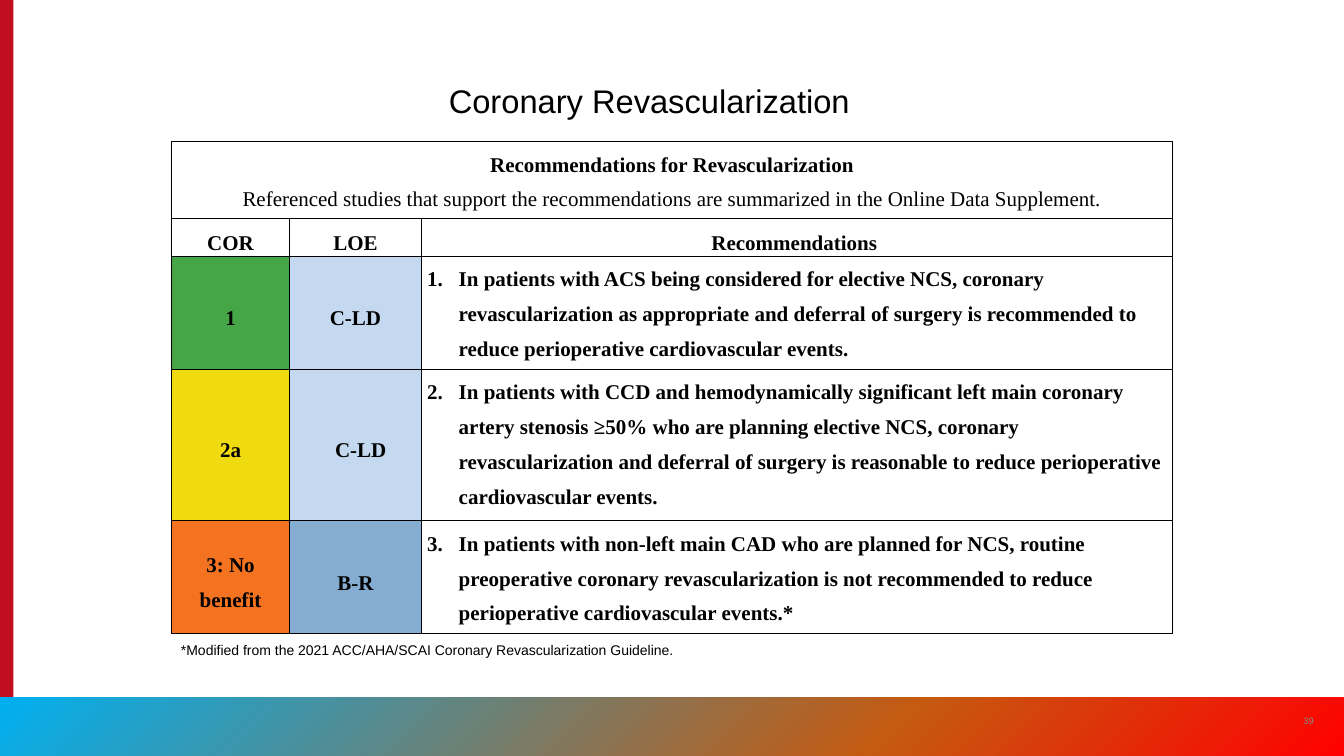
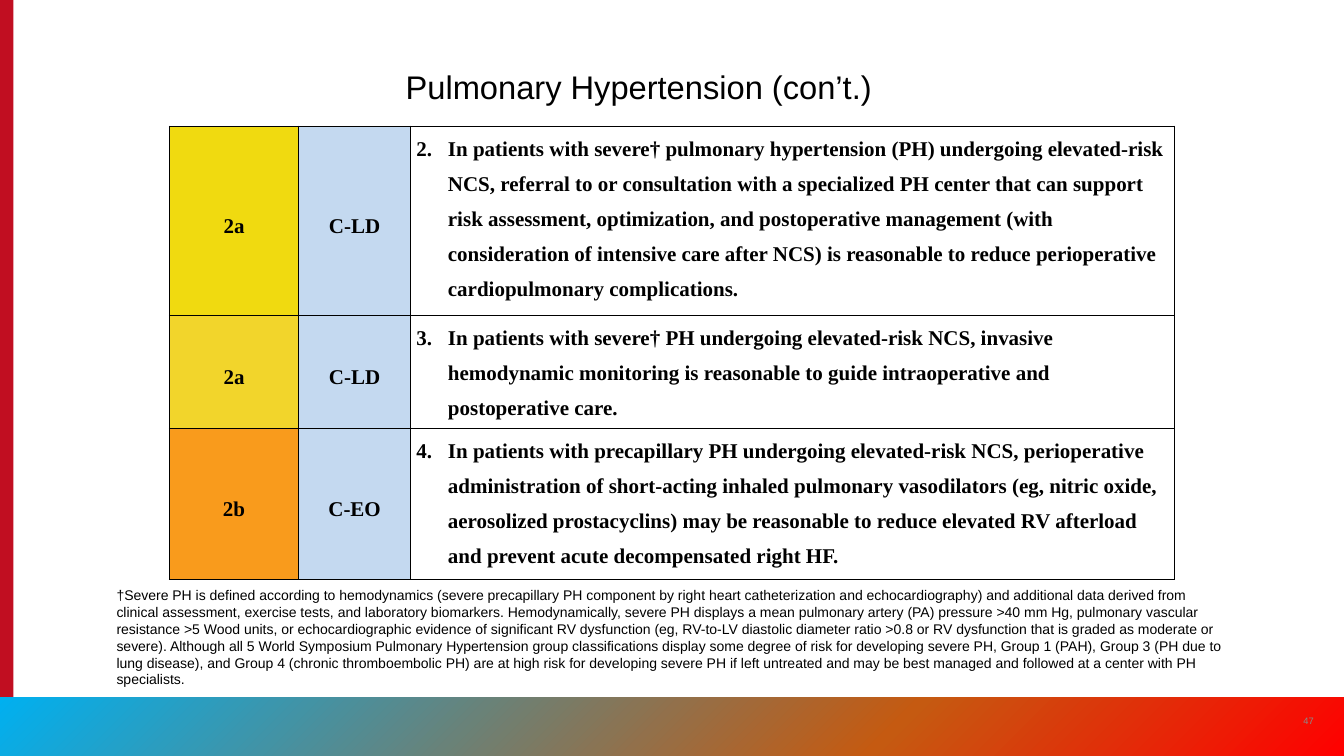
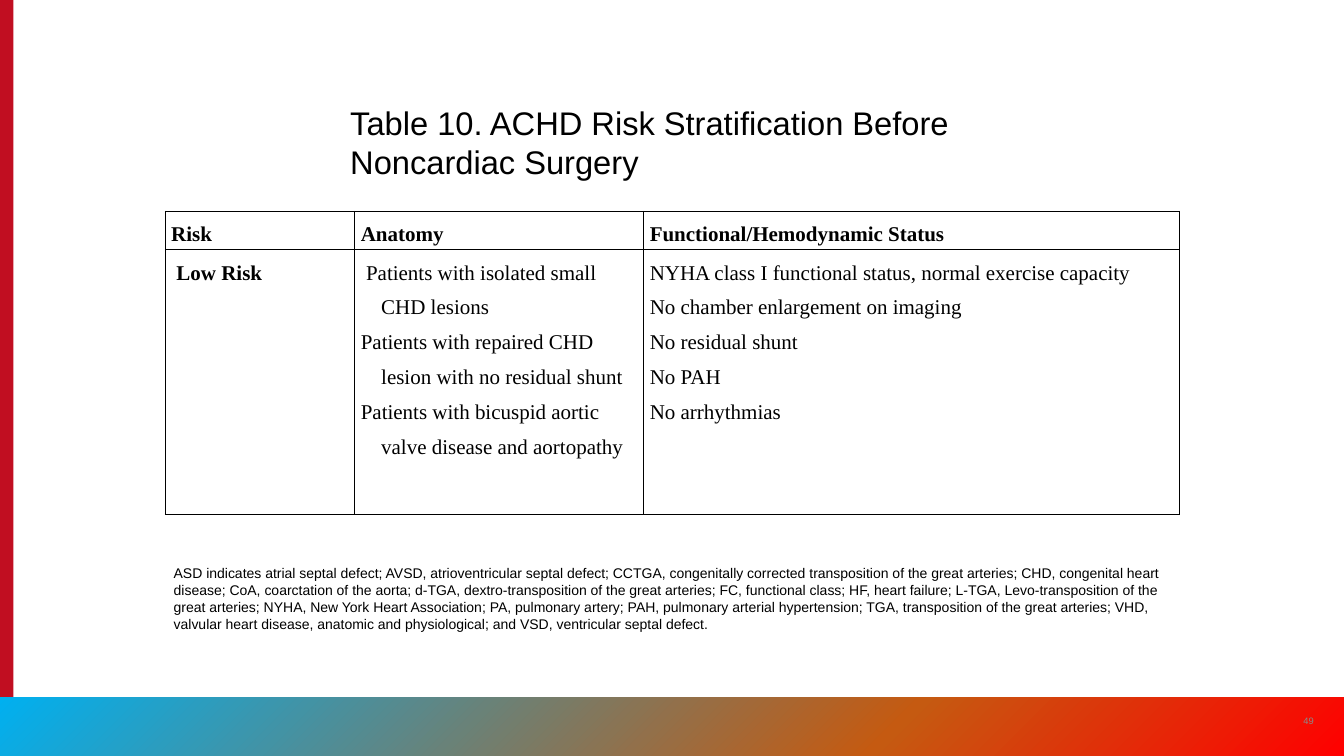
import copy
import dataclasses

import lxml.etree
import pptx
import pptx.dml.color
import pptx.enum.shapes
import pptx.enum.text
import pptx.oxml.ns
import pptx.util

Pt = pptx.util.Pt
qn = pptx.oxml.ns.qn
ALIGN = pptx.enum.text.PP_ALIGN
ANCHOR = pptx.enum.text.MSO_ANCHOR
RECTANGLE = pptx.enum.shapes.MSO_SHAPE.RECTANGLE

COLOURS = {
    "text": "000000",
    "number": "8A8B8A",
    "red stripe": "C10E21",
    "band start": "00B0F0",
    "band middle": "C55A11",
    "band end": "FF0000",
    "green": "45A547",
    "yellow": "F0DA10",
    "gold": "F2D52B",
    "amber": "F99B1C",
    "orange": "F37321",
    "pale blue": "C4D9F0",
    "mid blue": "85ADD1",
}
SANS, SERIF = "Arial", "Times New Roman"
WIDTH, HEIGHT, BAND_TOP = 1152, 648, 597.6


def colour(name):
    return pptx.dml.color.RGBColor.from_string(COLOURS[name])


@dataclasses.dataclass
class Cell:
    """Content of one table cell; lengths are points."""
    lines: list
    fill: str = ""
    bold: bool = True
    align: ALIGN = ALIGN.CENTER
    anchor: ANCHOR = ANCHOR.MIDDLE
    margin_left: float = 0
    margin_right: float = 0
    hanging: float = 0
    first_shift: float = 0  # extra indent of the first paragraph
    number: int = 0         # list number, if any
    span: int = 1


def recommendation(grade, grade_fill, evidence, evidence_fill, number, text, shift=0):
    """Table row: class, level of evidence, numbered text."""
    return [
        Cell(grade.split("\n"), grade_fill),
        Cell([evidence], evidence_fill, margin_left=shift),
        Cell([text], align=ALIGN.LEFT, anchor=ANCHOR.TOP,
             margin_left=27, hanging=27, number=number),
    ]


def left_cell(*lines, bold=False, first_shift=0):
    return Cell(list(lines), bold=bold, align=ALIGN.LEFT, anchor=ANCHOR.TOP,
                margin_left=17.5, hanging=17.5, first_shift=first_shift)


class Deck:
    """Holds the style and the current slide."""

    def __init__(self):
        self.presentation = pptx.Presentation()
        self.presentation.slide_width = Pt(WIDTH)
        self.presentation.slide_height = Pt(HEIGHT)
        self.layout = self.presentation.slide_layouts[5]
        self.slide = None

    def new_slide(self, number):
        first = self.slide is None
        self.slide = self.presentation.slides.add_slide(self.layout)
        if first:
            self.decorate_layout()
        self.text(str(number), 1104.5, 600.5, 34.5, 34.5, 8, "number",
                  ALIGN.CENTER, ANCHOR.MIDDLE)

    def decorate_layout(self):
        """Draw the stripe and the band once, then move them to the layout."""
        stripe = self.rectangle(0, 0, 11.5, HEIGHT)
        stripe.fill.solid()
        stripe.fill.fore_color.rgb = colour("red stripe")
        band = self.rectangle(0, BAND_TOP, WIDTH, HEIGHT - BAND_TOP)
        band.fill.gradient()
        band.fill.gradient_angle = 315
        stop_list = next(band.element.iter(qn("a:gsLst")))
        stop_list.append(copy.deepcopy(stop_list[-1]))
        stops = [(0, "band start"), (0.66, "band middle"), (1, "band end")]
        for stop, (position, name) in zip(band.fill.gradient_stops, stops):
            stop.position = position
            stop.color.rgb = colour(name)
        for shape in (stripe, band):
            self.layout.shapes._spTree.append(shape.element)

    def rectangle(self, left, top, width, height):
        shape = self.slide.shapes.add_shape(
            RECTANGLE, Pt(left), Pt(top), Pt(width), Pt(height))
        shape.shadow.inherit = False
        shape.line.fill.background()
        return shape

    def style(self, paragraph, size, font=SANS, name="text", bold=False):
        paragraph.font.size = Pt(size)
        paragraph.font.name = font
        paragraph.font.bold = bold
        paragraph.font.color.rgb = colour(name)

    def fill_frame(self, frame, text, size, name="text",
                   align=ALIGN.LEFT, anchor=ANCHOR.TOP):
        frame.word_wrap = True
        frame.auto_size = pptx.enum.text.MSO_AUTO_SIZE.NONE
        frame.vertical_anchor = anchor
        frame.text = text
        paragraph = frame.paragraphs[0]
        paragraph.alignment = align
        self.style(paragraph, size, name=name)

    def title(self, text, left, top, width, height=41):
        title = self.slide.shapes.title
        title.left, title.top = Pt(left), Pt(top)
        title.width, title.height = Pt(width), Pt(height)
        self.fill_frame(title.text_frame, text, 28)

    def text(self, text, left, top, width, height, size=12, name="text",
             align=ALIGN.LEFT, anchor=ANCHOR.TOP):
        box = self.slide.shapes.add_textbox(Pt(left), Pt(top), Pt(width), Pt(height))
        self.fill_frame(box.text_frame, text, size, name, align, anchor)

    def table(self, left, top, widths, heights, rows):
        frame = self.slide.shapes.add_table(
            len(heights), len(widths), Pt(left), Pt(top),
            Pt(sum(widths)), Pt(sum(heights)))
        table = frame.table
        table.first_row = table.horz_banding = False
        for column, width in zip(table.columns, widths):
            column.width = Pt(width)
        for row, height in zip(table.rows, heights):
            row.height = Pt(height)
        for cell in table.iter_cells():
            self.border(cell)
            cell.fill.background()
        for row_index, row in enumerate(rows):
            for column_index, content in enumerate(row):
                cell = table.cell(row_index, column_index)
                if content.span > 1:
                    cell.merge(table.cell(row_index, column_index + content.span - 1))
                self.write_cell(cell, content)
        return table

    def border(self, cell):
        properties = cell._tc.get_or_add_tcPr()
        for side in ("a:lnL", "a:lnR", "a:lnT", "a:lnB"):
            line = lxml.etree.SubElement(properties, qn(side), w=str(Pt(1)))
            solid = lxml.etree.SubElement(line, qn("a:solidFill"))
            lxml.etree.SubElement(solid, qn("a:srgbClr"), val=COLOURS["text"])

    def write_cell(self, cell, content):
        cell.margin_left = cell.margin_right = Pt(5)
        cell.margin_top = cell.margin_bottom = 0
        cell.vertical_anchor = content.anchor
        if content.fill:
            cell.fill.solid()
            cell.fill.fore_color.rgb = colour(content.fill)
        cell.text_frame.text = "\n".join(content.lines)
        for index, paragraph in enumerate(cell.text_frame.paragraphs):
            shift = 0 if index else content.first_shift
            properties = paragraph._p.get_or_add_pPr()
            properties.set("marL", str(Pt(content.margin_left)))
            properties.set("marR", str(Pt(content.margin_right)))
            properties.set("indent", str(Pt(shift - content.hanging)))
            if content.number:
                lxml.etree.SubElement(properties, qn("a:buAutoNum"),
                                      type="arabicPeriod", startAt=str(content.number))
            paragraph.alignment = content.align
            paragraph.line_spacing = 1.5
            self.style(paragraph, 18, SERIF, bold=content.bold)


def coronary_slide(deck):
    deck.new_slide(39)
    deck.title("Coronary Revascularization", 377.5, 66, 397)
    heading = Cell(["Recommendations for Revascularization",
                    "Referenced studies that support the recommendations are "
                    "summarized in the Online Data Supplement."],
                   anchor=ANCHOR.TOP, span=3)
    table = deck.table(147, 121.5, [101.2, 113, 643.8], [65.5, 32.5, 97, 130, 97], [
        [heading],
        [Cell(["COR"]), Cell(["LOE"]), Cell(["Recommendations"], margin_right=4.5)],
        recommendation(
            "1", "green", "C-LD", "pale blue", 1,
            "In patients with ACS being considered for elective NCS, coronary "
            "revascularization as appropriate and deferral of surgery is recommended "
            "to reduce perioperative cardiovascular events."),
        recommendation(
            "2a", "yellow", "C-LD", "pale blue", 2,
            "In patients with CCD and hemodynamically significant left main coronary "
            "artery stenosis ≥50% who are planning elective NCS, coronary "
            "revascularization and deferral of surgery is reasonable to reduce "
            "perioperative cardiovascular events.", shift=9),
        recommendation(
            "3: No\nbenefit", "orange", "B-R", "mid blue", 3,
            "In patients with non-left main CAD who are planned for NCS, routine "
            "preoperative coronary revascularization is not recommended to reduce "
            "perioperative cardiovascular events.*"),
    ])
    # The first heading line is bold, the second regular
    table.cell(0, 0).text_frame.paragraphs[1].font.bold = False
    deck.text("*Modified from the 2021 ACC/AHA/SCAI Coronary Revascularization Guideline.",
              148, 546, 486, 21.5)


def hypertension_slide(deck):
    deck.new_slide(47)
    deck.title("Pulmonary Hypertension (con’t.)", 340.5, 54, 471)
    deck.table(145.2, 108.2, [110.8, 96, 654.5], [162, 97, 129.5], [
        recommendation(
            "2a", "yellow", "C-LD", "pale blue", 2,
            "In patients with severe† pulmonary hypertension (PH) undergoing "
            "elevated-risk NCS, referral to or consultation with a specialized PH "
            "center that can support risk assessment, optimization, and postoperative "
            "management (with consideration of intensive care after NCS) is reasonable "
            "to reduce perioperative cardiopulmonary complications."),
        recommendation(
            "2a", "gold", "C-LD", "pale blue", 3,
            "In patients with severe† PH undergoing elevated-risk NCS, invasive "
            "hemodynamic monitoring is reasonable to guide intraoperative and "
            "postoperative care."),
        recommendation(
            "2b", "amber", "C-EO", "pale blue", 4,
            "In patients with precapillary PH undergoing elevated-risk NCS, "
            "perioperative administration of short-acting inhaled pulmonary "
            "vasodilators (eg, nitric oxide, aerosolized prostacyclins) may be "
            "reasonable to reduce elevated RV afterload and prevent acute "
            "decompensated right HF."),
    ])
    footnote_sentences = [
        "†Severe PH is defined according to hemodynamics (severe precapillary PH "
        "component by right heart catheterization and echocardiography) and additional "
        "data derived from clinical assessment, exercise tests, and laboratory "
        "biomarkers.",
        "Hemodynamically, severe PH displays a mean pulmonary artery (PA) "
        "pressure >40 mm Hg, pulmonary vascular resistance >5 Wood units, or "
        "echocardiographic evidence of significant RV dysfunction (eg, RV-to-LV "
        "diastolic diameter ratio >0.8 or RV dysfunction that is graded as moderate or "
        "severe).",
        "Although all 5 World Symposium Pulmonary Hypertension group "
        "classifications display some degree of risk for developing severe PH, Group 1 "
        "(PAH), Group 3 (PH due to lung disease), and Group 4 (chronic thromboembolic "
        "PH) are at high risk for developing severe PH if left untreated and may be "
        "best managed and followed at a center with PH specialists.",
    ]
    deck.text(" ".join(footnote_sentences), 92.8, 499.5, 967, 94.5)


def risk_slide(deck):
    deck.new_slide(49)
    deck.title("Table 10. ACHD Risk Stratification Before Noncardiac Surgery",
               293, 84.2, 565, 75)
    headings = ["Risk", "Anatomy", "Functional/Hemodynamic Status"]
    deck.table(141.8, 181.2, [162.5, 247.7, 458.8], [32.8, 227], [
        [left_cell(heading, bold=True) for heading in headings],
        [
            left_cell("Low Risk", bold=True, first_shift=4.5),
            left_cell("Patients with isolated small CHD lesions",
                      "Patients with repaired CHD lesion with no residual shunt",
                      "Patients with bicuspid aortic valve disease and aortopathy",
                      first_shift=4.5),
            left_cell("NYHA class I functional status, normal exercise capacity",
                      "No chamber enlargement on imaging",
                      "No residual shunt",
                      "No PAH",
                      "No arrhythmias"),
        ],
    ])
    deck.text(
        "ASD indicates atrial septal defect; AVSD, atrioventricular septal defect; "
        "CCTGA, congenitally corrected transposition of the great arteries; CHD, "
        "congenital heart disease; CoA, coarctation of the aorta; d-TGA, "
        "dextro-transposition of the great arteries; FC, functional class; HF, heart "
        "failure; L-TGA, Levo-transposition of the great arteries; NYHA, New York Heart "
        "Association; PA, pulmonary artery; PAH, pulmonary arterial hypertension; TGA, "
        "transposition of the great arteries; VHD, valvular heart disease, anatomic and "
        "physiological; and VSD, ventricular septal defect.",
        141.8, 480.5, 869, 65.5)


def main():
    deck = Deck()
    coronary_slide(deck)
    hypertension_slide(deck)
    risk_slide(deck)
    deck.presentation.save("out.pptx")


if __name__ == "__main__":
    main()
